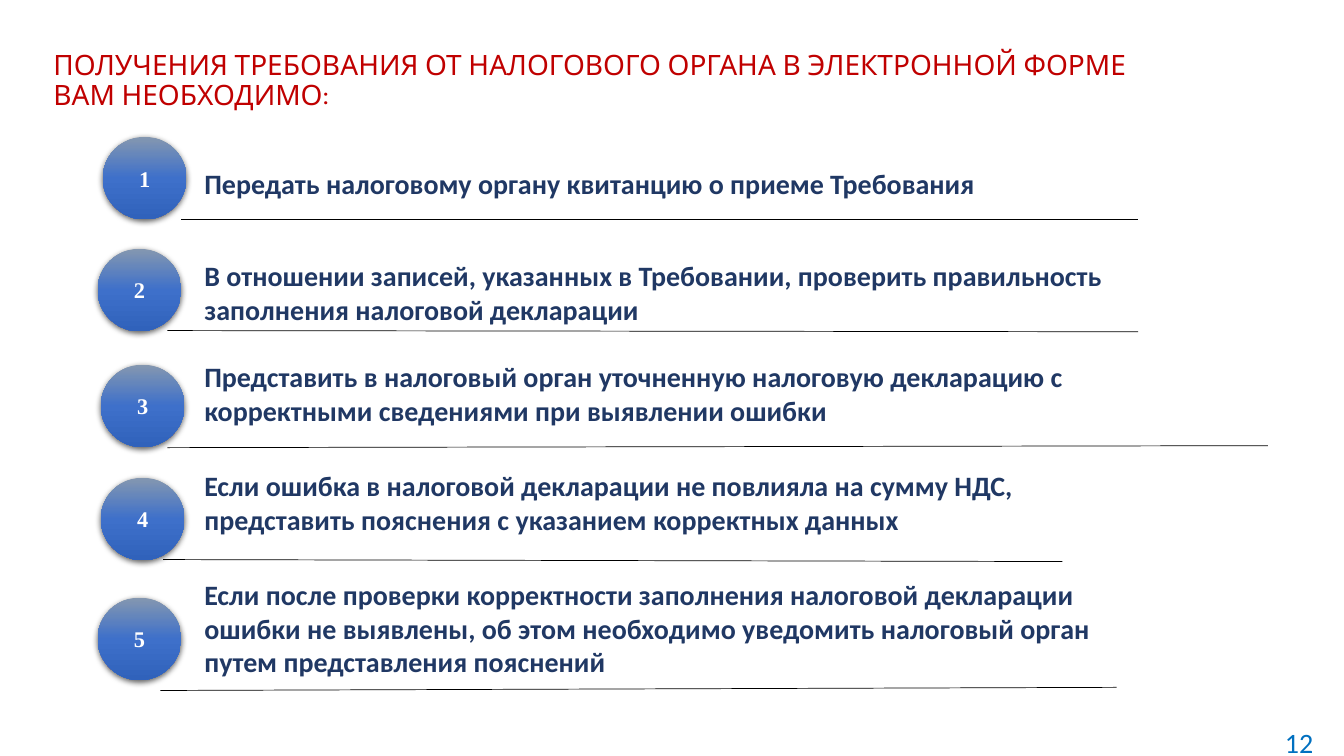
from lxml import etree
from pptx import Presentation
from pptx.dml.color import RGBColor
from pptx.enum.shapes import MSO_CONNECTOR, MSO_SHAPE
from pptx.enum.text import MSO_ANCHOR, MSO_AUTO_SIZE, PP_ALIGN
from pptx.oxml import parse_xml
from pptx.oxml.ns import nsdecls, qn
from pptx.util import Cm, Pt

OVAL = MSO_SHAPE.OVAL
STRAIGHT = MSO_CONNECTOR.STRAIGHT
FIXED = MSO_AUTO_SIZE.NONE
MIDDLE, TOP = MSO_ANCHOR.MIDDLE, MSO_ANCHOR.TOP
LEFT, CENTER, RIGHT = PP_ALIGN.LEFT, PP_ALIGN.CENTER, PP_ALIGN.RIGHT

TITLE = ("ПОЛУЧЕНИЯ ТРЕБОВАНИЯ ОТ НАЛОГОВОГО ОРГАНА В ЭЛЕКТРОННОЙ ФОРМЕ \v"
         "ВАМ НЕОБХОДИМО:")

STEPS = [
    ((2.59, 3.45), (4.57, 5.54, 28.68, 5.54), (4.06, 25.45, 1.12),
     "Передать налоговому органу квитанцию о приеме Требования"),
    ((2.46, 6.27), (4.22, 8.33, 28.68, 8.36), (6.4, 23.8, 1.96),
     "В отношении записей, указанных в Требовании, проверить правильность "
     "заполнения налоговой декларации"),
    ((2.54, 9.19), (4.22, 11.28, 31.95, 11.23), (8.94, 23.8, 1.96),
     "Представить в налоговый орган уточненную налоговую декларацию с "
     "корректными сведениями при выявлении ошибки"),
    ((2.54, 12.04), (4.11, 14.1, 26.77, 14.15), (11.68, 23.8, 1.96),
     "Если ошибка в налоговой декларации не повлияла на сумму НДС, "
     "представить пояснения с указанием корректных данных"),
    ((2.46, 15.06), (4.04, 17.4, 28.14, 17.32), (14.43, 23.8, 2.82),
     "Если после проверки корректности заполнения налоговой декларации "
     "ошибки не выявлены, об этом необходимо уведомить налоговый орган "
     "путем представления пояснений"),
]


def rgb(value):
    return RGBColor.from_string(value)


class Deck:
    RED, BLUE, NAVY = "C00000", "0070C0", "203864"
    WHITE, BLACK = "FFFFFF", "000000"
    GRADIENT = [(0, "8497B0"), (50, "3E70CA"), (100, "3062BB")]
    BODY, HEADING, NUMBER = "Calibri", "Karla", "Times New Roman"

    def __init__(self):
        self.prs = Presentation()
        self.prs.slide_width, self.prs.slide_height = Cm(33.87), Cm(19.05)
        self.slide = self.prs.slides.add_slide(self.prs.slide_layouts[5])

    def set_text(self, s, text, font, size, color, bold=False, align=LEFT, anchor=TOP):
        tf = s.text_frame
        tf.word_wrap = True
        tf.auto_size = FIXED
        tf.vertical_anchor = anchor
        p = tf.paragraphs[0]
        p.text = text
        p.alignment = align
        p.font.name, p.font.size, p.font.bold = font, Pt(size), bold
        p.font.color.rgb = rgb(color)
        return p

    def title(self, text, left, top, width, height):
        s = self.slide.shapes.title
        s.left, s.top, s.width, s.height = map(Cm, (left, top, width, height))
        p = self.set_text(s, text, self.HEADING, 20, self.RED, anchor=MIDDLE)
        p.line_spacing = 0.9

    def text(self, text, left, top, width, height, color, **style):
        s = self.slide.shapes.add_textbox(*map(Cm, (left, top, width, height)))
        self.set_text(s, text, self.BODY, 20, color, **style)

    def rule(self, x1, y1, x2, y2):
        s = self.slide.shapes.add_connector(STRAIGHT, *map(Cm, (x1, y1, x2, y2)))
        s.line.color.rgb = rgb(self.BLACK)
        s.line.width = Pt(0.5)
        etree.SubElement(s._element.spPr, qn("a:effectLst"))

    def circle(self, text, left, top):
        s = self.slide.shapes.add_shape(OVAL, *map(Cm, (left, top, 2.11, 2.08)))
        stops = "".join(f'<a:gs pos="{pos * 1000}"><a:srgbClr val="{color}"/></a:gs>'
                        for pos, color in self.GRADIENT)
        spPr = s._element.spPr
        spPr.append(parse_xml(
            f'<a:gradFill {nsdecls("a")} rotWithShape="1"><a:gsLst>{stops}</a:gsLst>'
            '<a:lin ang="5400000" scaled="0"/></a:gradFill>'))
        s.line.fill.background()
        s.shadow.inherit = False
        spPr.find(qn("a:effectLst")).append(parse_xml(
            f'<a:outerShdw {nsdecls("a")} blurRad="{Pt(4.5)}" dist="{Pt(1.5)}" '
            f'dir="5400000" algn="ctr" rotWithShape="0"><a:srgbClr val="{self.BLACK}">'
            '<a:alpha val="63000"/></a:srgbClr></a:outerShdw>'))
        self.set_text(s, text, self.NUMBER, 16, self.WHITE, True, CENTER, MIDDLE)


def main():
    deck = Deck()
    deck.title(TITLE, 1.09, 0.74, 31.62, 2.62)
    for number, (circle, rule, (top, width, height), text) in enumerate(STEPS, 1):
        deck.rule(*rule)
        deck.circle(str(number), *circle)
        deck.text(text, 4.9, top, width, height, deck.NAVY, bold=True)
    deck.text("12", 31.14, 18.03, 2.21, 1.35, deck.BLUE, align=RIGHT, anchor=MIDDLE)
    deck.prs.save("out.pptx")


if __name__ == "__main__":
    main()
